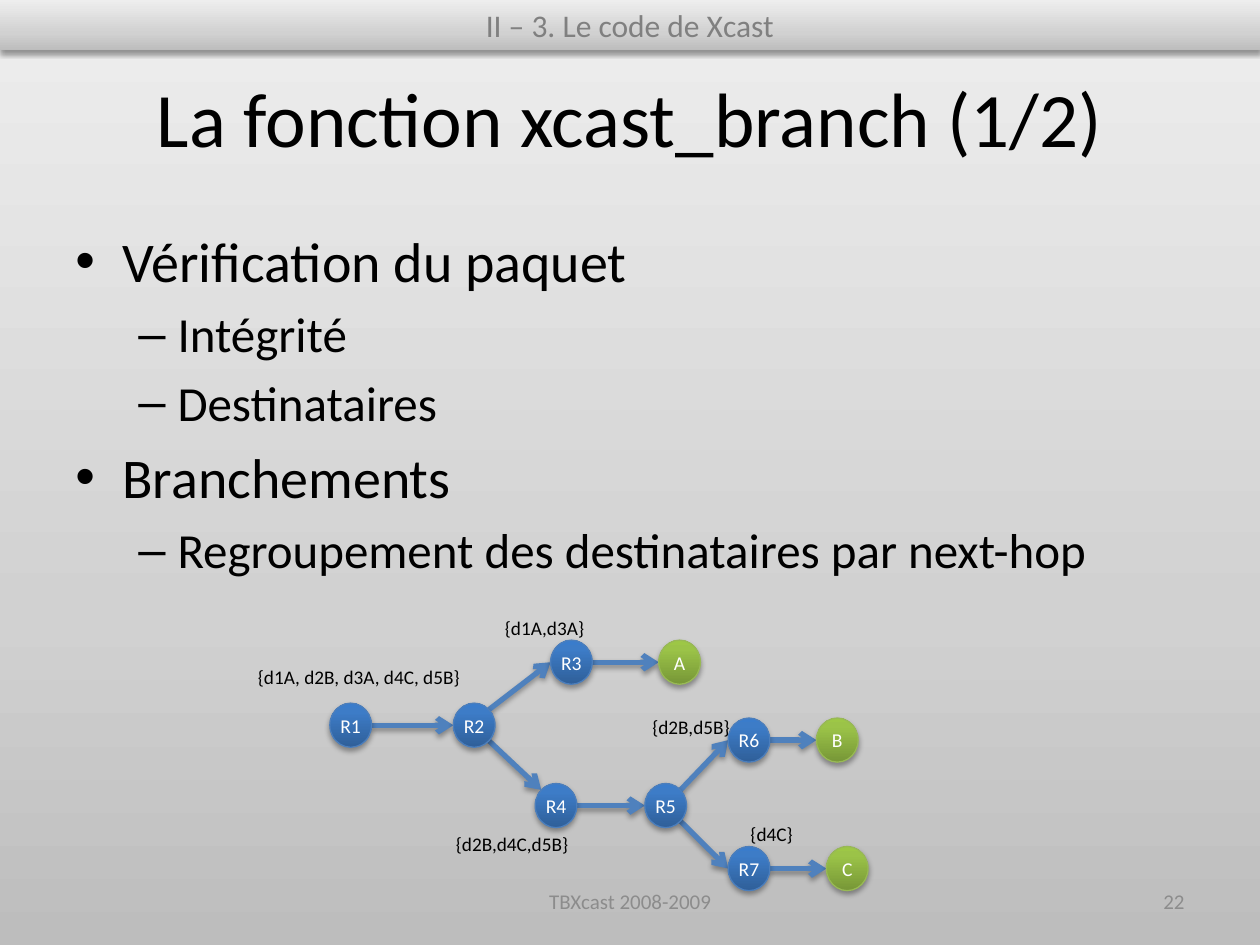
from lxml.etree import SubElement
from pptx import Presentation
from pptx.dml.color import RGBColor
from pptx.enum.shapes import MSO_CONNECTOR, MSO_SHAPE
from pptx.enum.text import MSO_ANCHOR, PP_ALIGN
from pptx.oxml.ns import qn
from pptx.util import Cm, Pt

FONT = "Calibri"
BLACK = RGBColor(0x00, 0x00, 0x00)
WHITE = RGBColor(0xFF, 0xFF, 0xFF)
GRAY = RGBColor(0x80, 0x80, 0x80)
PALE = RGBColor(0x8C, 0x8C, 0x8C)
ARROW = RGBColor(0x4F, 0x81, 0xBD)
BLUE_RIM = RGBColor(0x4B, 0x7E, 0xBC)
GREEN_RIM = RGBColor(0x98, 0xB9, 0x55)

# Gradient stops, from bottom to top: percent and colour
SILVER = [(0, RGBColor(0xBD, 0xBD, 0xBD)), (35, RGBColor(0xD1, 0xD1, 0xD1)),
          (100, RGBColor(0xEE, 0xEE, 0xEE))]
BLUE = [(0, RGBColor(0x2F, 0x5F, 0x99)), (80, RGBColor(0x3D, 0x7C, 0xC7)),
        (100, RGBColor(0x3A, 0x7C, 0xCB))]
GREEN = [(0, RGBColor(0x77, 0x97, 0x37)), (80, RGBColor(0x9B, 0xC3, 0x48)),
         (100, RGBColor(0x9D, 0xC7, 0x46))]

BANNER = "II – 3. Le code de Xcast"
TITLE = "La fonction xcast_branch (1/2)"
POINTS = [
    (0, "Vérification du paquet"),
    (1, "Intégrité"),
    (1, "Destinataires"),
    (0, "Branchements"),
    (1, "Regroupement des destinataires par next-hop"),
]
# Per level: bullet, text size, left margin and hanging indent in cm
LEVELS = [("•", 32, 0.95, 0.95), ("–", 28, 2.06, 0.79)]

# Footer: text, left, width, alignment
FOOTER = [
    ("TBXcast 2008-2009", 8.68, 8.05, PP_ALIGN.CENTER),
    ("22", 18.2, 5.93, PP_ALIGN.RIGHT),
]

# Network: centre of each node, in cm
WIDE, HIGH = 0.84, 0.89
ROUTERS = {
    "R1": (7.07, 14.62), "R2": (9.56, 14.62), "R3": (11.52, 13.35),
    "R4": (11.21, 16.24), "R5": (13.42, 16.24),
    "R6": (15.1, 14.92), "R7": (15.1, 17.51),
}
HOSTS = {"A": (13.7, 13.35), "B": (16.88, 14.92), "C": (17.08, 17.51)}
NODES = ROUTERS | HOSTS

# Points on the rim of a node, in half widths and half heights
RIM = {"E": (1, 0), "W": (-1, 0), "NE": (0.71, -0.71),
       "SE": (0.71, 0.71), "NW": (-0.71, -0.71)}
LINKS = [
    ("R1", "E", "R2", "W"), ("R2", "NE", "R3", "W"), ("R2", "SE", "R4", "NW"),
    ("R3", "E", "A", "W"), ("R4", "E", "R5", "W"), ("R5", "NE", "R6", "W"),
    ("R5", "SE", "R7", "W"), ("R6", "E", "B", "W"), ("R7", "E", "C", "W"),
]
# Destination lists: text, left, top, width
LABELS = [
    ("{d1A, d2B, d3A, d4C, d5B}", 4.95, 13.28, 4.95),
    ("{d1A,d3A}", 9.93, 12.29, 2.26),
    ("{d2B,d5B}", 12.9, 14.3, 2.69),
    ("{d4C}", 14.88, 16.46, 1.83),
    ("{d2B,d4C,d5B}", 8.94, 16.66, 3.18),
]


def box(*sides):
    return [Cm(side) for side in sides]


def style(para, size, color, align=PP_ALIGN.LEFT):
    para.alignment = align
    for run in para.runs:
        run.font.name = FONT
        run.font.size = Pt(size)
        run.font.color.rgb = color


def shade(fill, owner, stops):
    """Give fill a vertical gradient; owner is the element that holds it."""
    fill.gradient()
    fill.gradient_angle = 90
    group = next(owner.iter(qn("a:gsLst")))
    for old in list(group):
        group.remove(old)
    for place, color in stops:
        stop = SubElement(group, qn("a:gs"), pos=str(place * 1000))
        SubElement(stop, qn("a:srgbClr"), val=str(color))


def drop(shape, blur, dist, alpha):
    """Cast a shadow straight down; fill and line must be set before."""
    effects = SubElement(shape.element.spPr, qn("a:effectLst"))
    outer = SubElement(effects, qn("a:outerShdw"), blurRad=str(Pt(blur)),
                       dist=str(Pt(dist)), dir="5400000", rotWithShape="0")
    color = SubElement(outer, qn("a:srgbClr"), val=str(BLACK))
    SubElement(color, qn("a:alpha"), val=str(alpha * 1000))


def add_text(slide, text, place, size, color, align=PP_ALIGN.LEFT):
    frame = slide.shapes.add_textbox(*box(*place)).text_frame
    frame.word_wrap = True
    frame.text = text
    style(frame.paragraphs[0], size, color, align)
    return frame


def add_points(slide):
    frame = slide.shapes.add_textbox(*box(1.27, 4.45, 23.5, 13.77)).text_frame
    frame.word_wrap = True
    frame.text = "\n".join(text for _, text in POINTS)
    for para, (level, _) in zip(frame.paragraphs, POINTS):
        mark, size, left, hang = LEVELS[level]
        para.level = level
        para.space_before = Pt(size * 0.2)
        style(para, size, BLACK)
        props = para._p.get_or_add_pPr()
        props.set("marL", str(Cm(left)))
        props.set("indent", str(-Cm(hang)))
        SubElement(props, qn("a:buFont"), typeface="Arial")
        SubElement(props, qn("a:buChar"), char=mark)


def add_banner(slide):
    bar = slide.shapes.add_shape(MSO_SHAPE.RECTANGLE, *box(0, 0, 25.4, 1.02))
    shade(bar.fill, bar.element, SILVER)
    bar.line.fill.background()
    drop(bar, 3.1, 1.6, 38)
    bar.text_frame.text = BANNER
    style(bar.text_frame.paragraphs[0], 18, GRAY, PP_ALIGN.CENTER)


def rim(name, side):
    x, y = NODES[name]
    dx, dy = RIM[side]
    return box(x + dx * WIDE / 2, y + dy * HIGH / 2)


def add_link(slide, start, out, end, into):
    link = slide.shapes.add_connector(
        MSO_CONNECTOR.STRAIGHT, *rim(start, out), *rim(end, into))
    link.line.color.rgb = ARROW
    link.line.width = Pt(3)
    SubElement(link.line._get_or_add_ln(), qn("a:tailEnd"), type="arrow")
    drop(link, 3.1, 1.8, 35)


def add_node(slide, name, stops, edge):
    x, y = NODES[name]
    node = slide.shapes.add_shape(
        MSO_SHAPE.OVAL, *box(x - WIDE / 2, y - HIGH / 2, WIDE, HIGH))
    shade(node.fill, node.element, stops)
    node.line.color.rgb = edge
    node.line.width = Pt(0.75)
    drop(node, 3.1, 1.8, 35)
    frame = node.text_frame
    frame.margin_left = frame.margin_right = 0
    frame.word_wrap = False
    frame.text = name
    style(frame.paragraphs[0], 11.2, WHITE, PP_ALIGN.CENTER)


def main():
    deck = Presentation()
    deck.slide_width, deck.slide_height = box(25.4, 19.05)
    slide = deck.slides.add_slide(deck.slide_layouts[5])
    shade(slide.background.fill, slide.element, SILVER)

    title = slide.shapes.title
    title.left, title.top, title.width, title.height = box(1.27, 0.76, 22.86, 3.18)
    title.text_frame.text = TITLE
    title.text_frame.vertical_anchor = MSO_ANCHOR.MIDDLE
    style(title.text_frame.paragraphs[0], 44, BLACK, PP_ALIGN.CENTER)

    add_points(slide)
    for text, left, width, align in FOOTER:
        frame = add_text(slide, text, (left, 17.65, width, 1.02), 12, PALE, align)
        frame.vertical_anchor = MSO_ANCHOR.MIDDLE
    add_banner(slide)

    for link in LINKS:
        add_link(slide, *link)
    for name in ROUTERS:
        add_node(slide, name, BLUE, BLUE_RIM)
    for name in HOSTS:
        add_node(slide, name, GREEN, GREEN_RIM)
    for text, left, top, width in LABELS:
        add_text(slide, text, (left, top, width, 0.74), 11, BLACK)

    deck.save("out.pptx")


if __name__ == "__main__":
    main()
